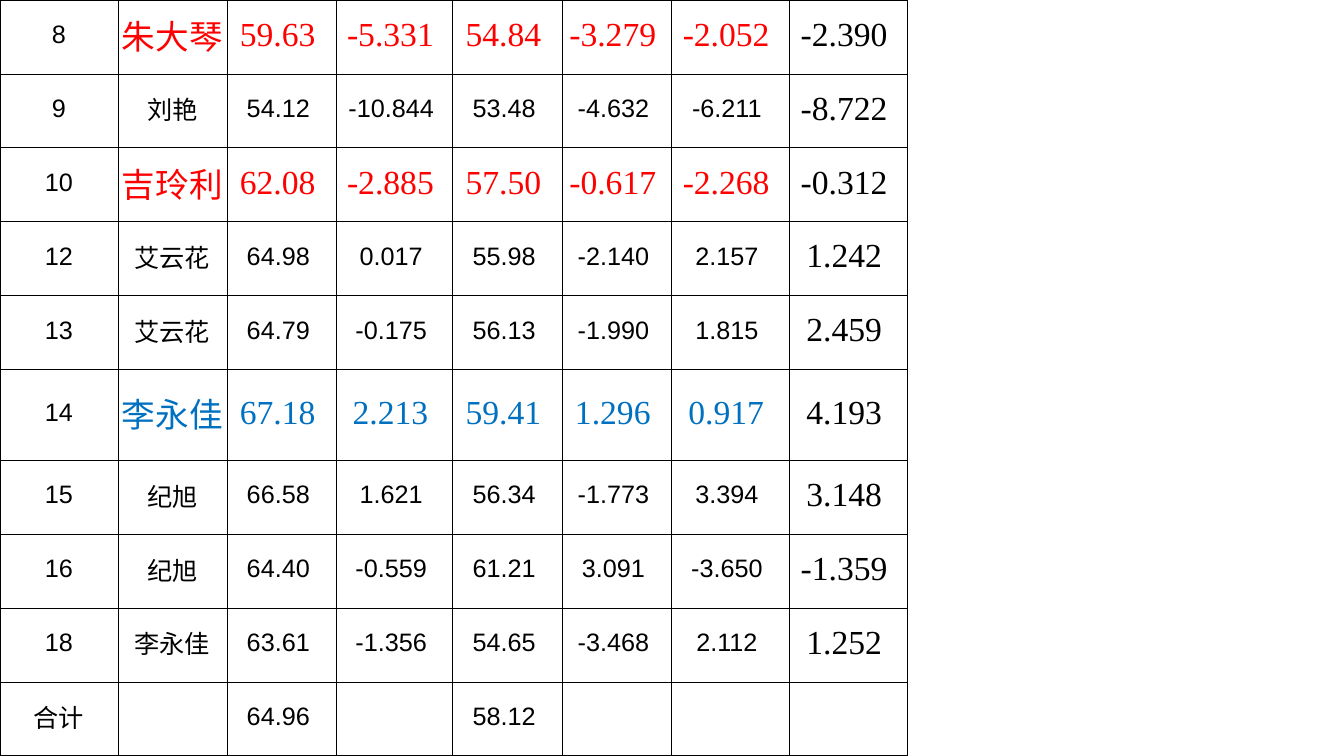
from dataclasses import dataclass
from typing import Optional

from lxml.etree import SubElement
from pptx import Presentation
from pptx.dml.color import RGBColor
from pptx.enum.text import MSO_ANCHOR, PP_ALIGN
from pptx.oxml.ns import qn
from pptx.table import Table, _Cell
from pptx.util import Inches, Pt

BLACK = RGBColor(0x00, 0x00, 0x00)
RED = RGBColor(0xFF, 0x00, 0x00)
BLUE = RGBColor(0x00, 0x70, 0xC0)

SLIDE_WIDTH, SLIDE_HEIGHT = Inches(13.33), Inches(7.5)
COLUMN_WIDTHS = (1.17, 1.08, 1.09, 1.15, 1.09, 1.08, 1.17, 1.17)
TALL_ROW_SHARE = 0.12
BORDER_WIDTH = Pt(0.5)
CELL_FORMAT = {
    "margin_left": Inches(0.01),
    "margin_right": Inches(0.01),
    "margin_top": Inches(0.01),
    "margin_bottom": Inches(0.05),
    "vertical_anchor": MSO_ANCHOR.MIDDLE,
}
PLAIN_FONT = {"name": "Arial", "size": Pt(18)}
LARGE_FONT = {"name": "Times New Roman", "size": Pt(24)}


@dataclass(frozen=True)
class ClassScore:
    label: str
    teacher: str
    values: tuple[str, ...]
    highlight: Optional[RGBColor] = None
    tall: bool = False


SCORES = (
    ClassScore("8", "朱大琴", ("59.63", "-5.331", "54.84", "-3.279", "-2.052", "-2.390"), RED),
    ClassScore("9", "刘艳", ("54.12", "-10.844", "53.48", "-4.632", "-6.211", "-8.722")),
    ClassScore("10", "吉玲利", ("62.08", "-2.885", "57.50", "-0.617", "-2.268", "-0.312"), RED),
    ClassScore("12", "艾云花", ("64.98", "0.017", "55.98", "-2.140", "2.157", "1.242")),
    ClassScore("13", "艾云花", ("64.79", "-0.175", "56.13", "-1.990", "1.815", "2.459")),
    ClassScore("14", "李永佳", ("67.18", "2.213", "59.41", "1.296", "0.917", "4.193"), BLUE, tall=True),
    ClassScore("15", "纪旭", ("66.58", "1.621", "56.34", "-1.773", "3.394", "3.148")),
    ClassScore("16", "纪旭", ("64.40", "-0.559", "61.21", "3.091", "-3.650", "-1.359")),
    ClassScore("18", "李永佳", ("63.61", "-1.356", "54.65", "-3.468", "2.112", "1.252")),
    ClassScore("合计", "", ("64.96", "", "58.12", "", "", "")),
)


def add_borders(cell: _Cell) -> None:
    properties = cell._tc.get_or_add_tcPr()
    for position, side in enumerate(("lnL", "lnR", "lnT", "lnB")):
        line = SubElement(properties, qn(f"a:{side}"), w=str(BORDER_WIDTH))
        fill = SubElement(line, qn("a:solidFill"))
        SubElement(fill, qn("a:srgbClr"), val=str(BLACK))
        properties.insert(position, line)


def write_cell(cell: _Cell, text: str, font_format: dict, colour: RGBColor) -> None:
    for name, value in CELL_FORMAT.items():
        setattr(cell, name, value)
    cell.fill.background()
    add_borders(cell)
    if not text:
        return
    paragraph = cell.text_frame.paragraphs[0]
    paragraph.alignment = PP_ALIGN.CENTER
    run = paragraph.add_run()
    run.text = text
    for name, value in font_format.items():
        setattr(run.font, name, value)
    run.font.color.rgb = colour


def fill_row(table: Table, row: int, score: ClassScore) -> None:
    """Highlight the teacher and scores; the last column is always large and black."""
    # Each figure ends with a space, which sets it slightly left of centre.
    figures = [f"{value} " if value else "" for value in score.values]
    texts = [score.label, score.teacher, *figures]
    last = len(texts) - 1
    for column, text in enumerate(texts):
        highlighted = score.highlight is not None and 0 < column < last
        font_format = LARGE_FONT if highlighted or column == last else PLAIN_FONT
        colour = score.highlight if highlighted else BLACK
        write_cell(table.cell(row, column), text, font_format, colour)


def main() -> None:
    presentation = Presentation()
    presentation.slide_width, presentation.slide_height = SLIDE_WIDTH, SLIDE_HEIGHT
    slide = presentation.slides.add_slide(presentation.slide_layouts[6])
    table = slide.shapes.add_table(
        len(SCORES), len(COLUMN_WIDTHS), 0, 0, Inches(sum(COLUMN_WIDTHS)), SLIDE_HEIGHT
    ).table
    table.first_row = table.horz_banding = False
    for column, width in zip(table.columns, COLUMN_WIDTHS):
        column.width = Inches(width)

    tall_height = int(SLIDE_HEIGHT * TALL_ROW_SHARE)
    row_height = (SLIDE_HEIGHT - tall_height) // (len(SCORES) - 1)
    for row, score in enumerate(SCORES):
        table.rows[row].height = tall_height if score.tall else row_height
        fill_row(table, row, score)
    presentation.save("out.pptx")


if __name__ == "__main__":
    main()
